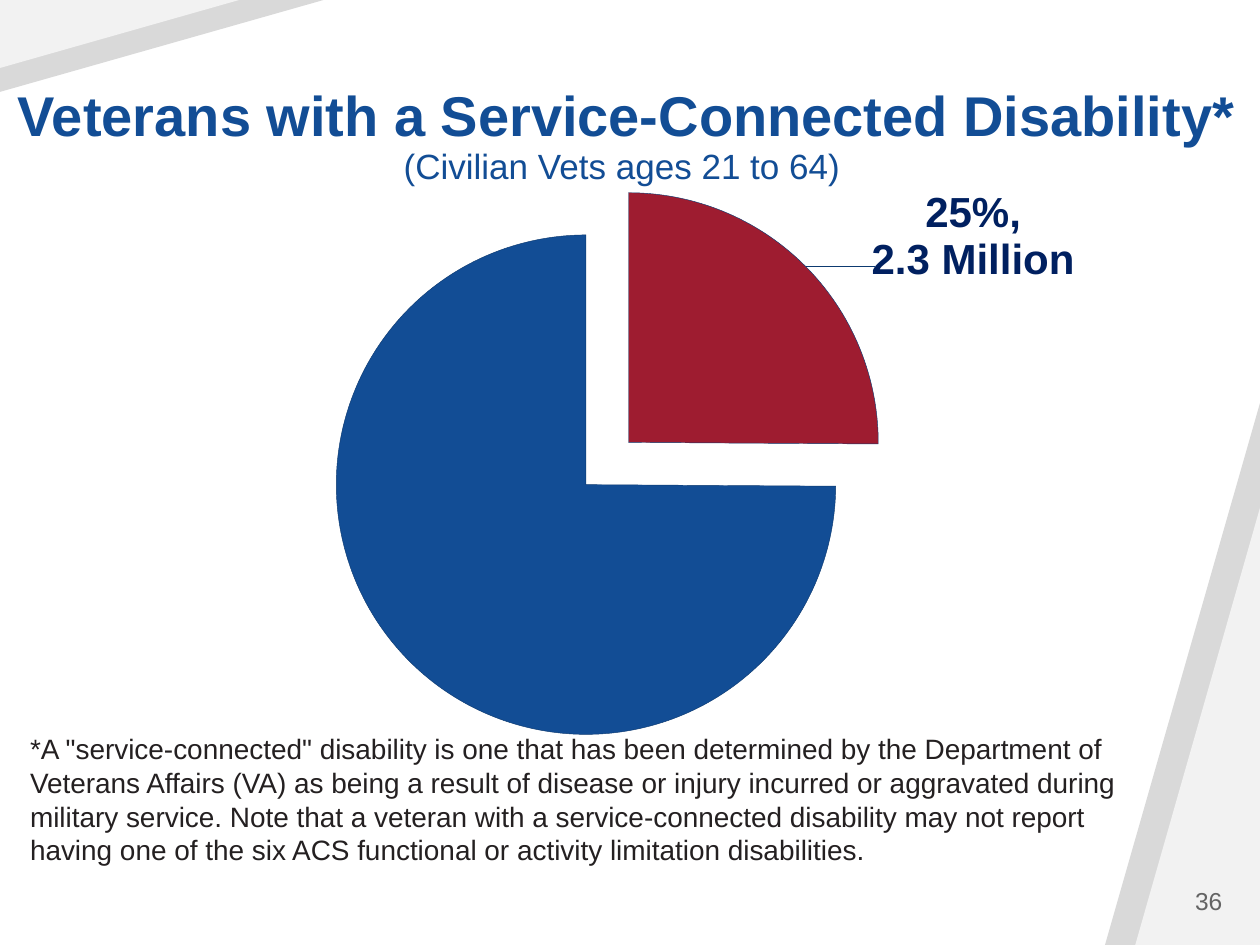
from typing import NamedTuple

from lxml.etree import SubElement
from pptx import Presentation
from pptx.chart.data import CategoryChartData
from pptx.dml.color import RGBColor
from pptx.enum.chart import XL_CHART_TYPE, XL_LABEL_POSITION
from pptx.enum.shapes import MSO_SHAPE
from pptx.enum.text import MSO_ANCHOR, PP_ALIGN
from pptx.oxml import parse_xml
from pptx.oxml.ns import nsdecls, qn
from pptx.util import Inches, Pt

COLORS = {
    "band": "D9D9D9", "corner": "F2F2F2", "blue": "124D95", "red": "9E1C30",
    "navy": "002060", "outline": "0D3A70", "body": "242021", "number": "646464",
}
CHART_WIDTH, CHART_HEIGHT = 8.13, 5.04


class Triangle(NamedTuple):
    left: float
    top: float
    width: float
    height: float
    color: str
    turned: bool


class Span(NamedTuple):
    text: str
    size: int
    color: str
    bold: bool = False


class TextBlock(NamedTuple):
    left: float
    top: float
    width: float
    height: float
    spans: list[Span]
    align: PP_ALIGN
    anchor: MSO_ANCHOR
    spacing: float = 1.0


TRIANGLES = [
    Triangle(8.77, 3.2, 1.23, 4.3, "band", False),
    Triangle(9.01, 4.03, 0.99, 3.47, "corner", False),
    Triangle(0.92, -0.92, 0.73, 2.57, "band", True),
    Triangle(0.68, -0.68, 0.54, 1.9, "corner", True),
]

TITLE = TextBlock(0, 0.38, 9.95, 1.15, [
    Span("Veterans with a Service-Connected Disability* ", 32, "blue", True),
    Span("(Civilian Vets ages 21 to 64) ", 20, "blue"),
], PP_ALIGN.CENTER, MSO_ANCHOR.BOTTOM, 0.9)

PAGE_NUMBER = TextBlock(8.4, 6.95, 1.4, 0.4, [Span("36", 14, "number")],
                        PP_ALIGN.RIGHT, MSO_ANCHOR.MIDDLE)

FOOTNOTE = TextBlock(0.14, 5.76, 9.13, 1.21, [Span(
    '*A "service-connected" disability is one that has been determined by the '
    "Department of Veterans Affairs (VA) as being a result of disease or injury "
    "incurred or aggravated during military service. Note that a veteran with a "
    "service-connected disability may not report having one of the six ACS "
    "functional or activity limitation disabilities.", 16, "body")],
    PP_ALIGN.LEFT, MSO_ANCHOR.TOP)


def rgb(name: str) -> RGBColor:
    return RGBColor.from_string(COLORS[name])


def format_font(font, span: Span) -> None:
    formats = {"name": "Arial", "size": Pt(span.size), "bold": span.bold}
    for attribute, value in formats.items():
        setattr(font, attribute, value)
    font.color.rgb = rgb(span.color)


def add_triangle(page, part: Triangle) -> None:
    shape = page.shapes.add_shape(
        MSO_SHAPE.ISOSCELES_TRIANGLE, Inches(part.left), Inches(part.top),
        Inches(part.width), Inches(part.height))
    shape.adjustments[0] = 1
    shape.shadow.inherit = False
    shape.fill.solid()
    shape.fill.fore_color.rgb = rgb(part.color)
    shape.line.fill.background()
    if part.turned:
        shape.rotation = 270
        shape._element.spPr.find(qn("a:xfrm")).set("flipV", "1")


def add_text(page, block: TextBlock) -> None:
    box = page.shapes.add_textbox(Inches(block.left), Inches(block.top),
                                  Inches(block.width), Inches(block.height))
    frame = box.text_frame
    frame.word_wrap = True
    frame.vertical_anchor = block.anchor
    para = frame.paragraphs[0]
    para.alignment = block.align
    para.line_spacing = block.spacing
    for part in block.spans:
        span = para.add_run()
        span.text = part.text
        format_font(span.font, part)


def manual_layout(**values):
    layout = parse_xml(f"<c:layout {nsdecls('c')}><c:manualLayout/></c:layout>")
    for name, value in values.items():
        SubElement(layout[0], qn(f"c:{name}")).set("val", str(value))
    return layout


def add_pie(page) -> None:
    data = CategoryChartData(number_format="0.0%")
    data.categories = ["1", "2"]
    data.add_series("Series 1", [0.251, 0.749])
    chart = page.shapes.add_chart(
        XL_CHART_TYPE.PIE, Inches(0.4), Inches(0.96), Inches(CHART_WIDTH),
        Inches(CHART_HEIGHT), data).chart
    chart.has_legend = False
    chart.has_title = False
    format_font(chart.font, Span("", 10, "body"))
    plot = chart.plots[0]
    plot.vary_by_categories = True

    # Plot area, as shares of the chart
    area = chart._chartSpace.chart.plotArea
    for old in area.findall(qn("c:layout")):
        area.remove(old)
    area.insert(0, manual_layout(
        layoutTarget="inner", xMode="edge", yMode="edge",
        x=2.2 / CHART_WIDTH, y=0.48 / CHART_HEIGHT,
        w=4.44 / CHART_WIDTH, h=4.48 / CHART_HEIGHT))

    # Slices
    series = plot.series[0]
    for index, color in enumerate(["red", "blue"]):
        form = series.points[index].format
        form.fill.solid()
        form.fill.fore_color.rgb = rgb(color)
        form.line.color.rgb = rgb("outline")
        form.line.width = Pt(0.25)
    explosion = parse_xml(f'<c:explosion {nsdecls("c")} val="12"/>')
    series._element.find(qn("c:dPt")).addprevious(explosion)

    # Label of the red slice
    series_labels = series.data_labels
    formats = {"show_value": True, "show_category_name": True,
               "number_format": "0.0%", "number_format_is_linked": False}
    for attribute, value in formats.items():
        setattr(series_labels, attribute, value)
    format_font(series_labels.font, Span("", 24, "navy", True))
    label = series.points[0].data_label
    frame = label.text_frame
    for index, text in enumerate(["25%,", "2.3 Million"]):
        para = frame.add_paragraph() if index else frame.paragraphs[0]
        para.alignment = PP_ALIGN.CENTER
        span = para.add_run()
        span.text = text
        format_font(span.font, Span(text, 24, "navy", True))
    label.position = XL_LABEL_POSITION.OUTSIDE_END
    labels = series._element.find(qn("c:dLbls"))
    label_element = labels.find(qn("c:dLbl"))
    label_element.find(qn("c:showCatName")).set("val", "1")
    for old in label_element.findall(qn("c:layout")):
        label_element.remove(old)
    label_element.find(qn("c:idx")).addnext(
        manual_layout(x=0.51 / CHART_WIDTH, y=0.18 / CHART_HEIGHT))

    # No label on the blue slice
    label_element.addnext(parse_xml(
        f'<c:dLbl {nsdecls("c")}><c:idx val="1"/><c:delete val="1"/></c:dLbl>'))

    # Leader line
    for name in ("showLeaderLines", "leaderLines"):
        for old in labels.findall(qn(f"c:{name}")):
            labels.remove(old)
    SubElement(labels, qn("c:showLeaderLines")).set("val", "1")
    labels.append(parse_xml(
        f'<c:leaderLines {nsdecls("c", "a")}><c:spPr><a:ln w="9525"><a:solidFill>'
        f'<a:srgbClr val="{COLORS["outline"]}"/></a:solidFill></a:ln></c:spPr>'
        "</c:leaderLines>"))


def main() -> None:
    deck = Presentation()
    deck.slide_width, deck.slide_height = Inches(10), Inches(7.5)
    page = deck.slides.add_slide(deck.slide_layouts[6])
    # Corner decoration
    for part in TRIANGLES:
        add_triangle(page, part)
    # Heading, chart and notes
    add_text(page, TITLE)
    add_text(page, PAGE_NUMBER)
    add_pie(page)
    add_text(page, FOOTNOTE)
    deck.save("out.pptx")


if __name__ == "__main__":
    main()
